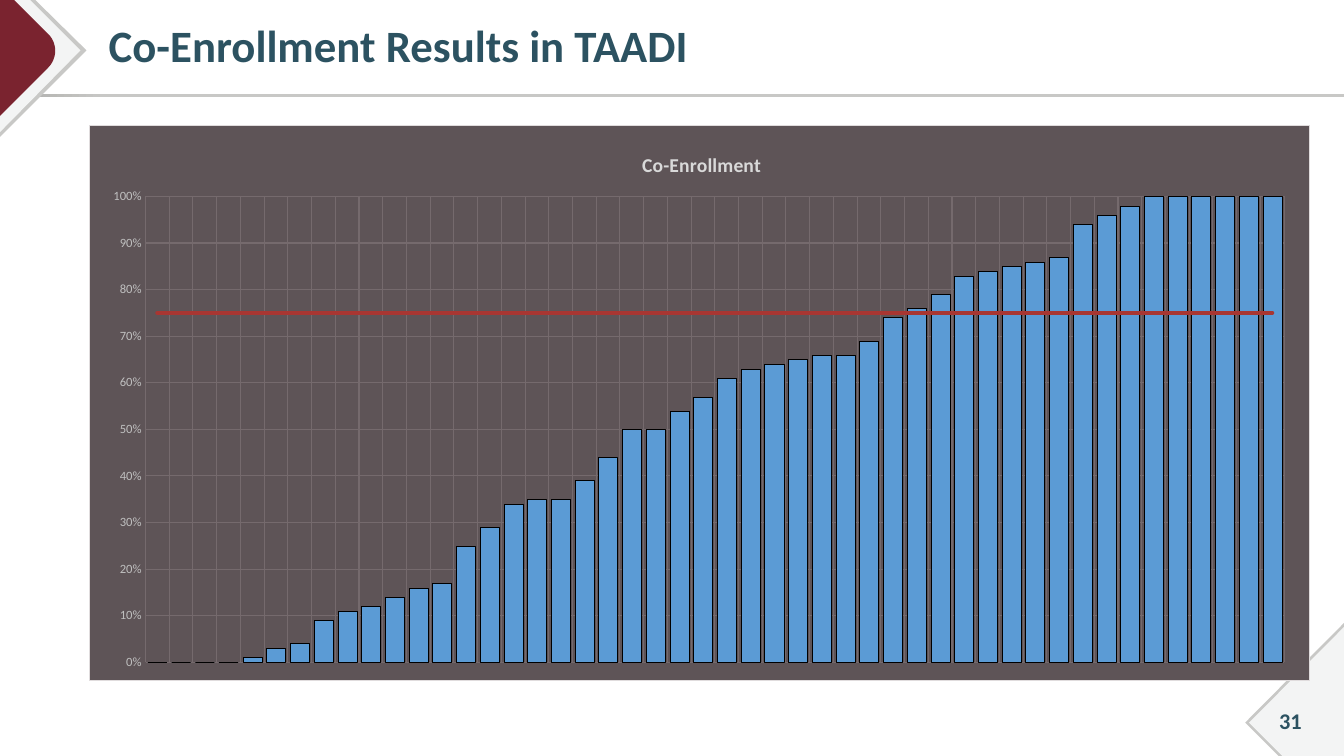
from lxml import etree
from pptx import Presentation
from pptx.chart.data import CategoryChartData
from pptx.dml.color import RGBColor
from pptx.enum.chart import XL_CHART_TYPE, XL_MARKER_STYLE, XL_TICK_LABEL_POSITION, XL_TICK_MARK
from pptx.enum.shapes import MSO_SHAPE
from pptx.enum.text import MSO_ANCHOR, PP_ALIGN
from pptx.oxml import parse_xml
from pptx.oxml.ns import qn
from pptx.util import Cm, Pt

COLUMN = XL_CHART_TYPE.COLUMN_CLUSTERED
NO_MARKER = XL_MARKER_STYLE.NONE
NO_LABELS = XL_TICK_LABEL_POSITION.NONE
NO_TICK = XL_TICK_MARK.NONE
RECT = MSO_SHAPE.RECTANGLE
MIDDLE = MSO_ANCHOR.MIDDLE
LEFT, CENTER = PP_ALIGN.LEFT, PP_ALIGN.CENTER

NAVY = RGBColor(0x2C, 0x52, 0x61)
MAROON = RGBColor(0x7A, 0x23, 0x2F)
SILVER = RGBColor(0xC8, 0xC8, 0xC6)
DARK_SILVER = RGBColor(0xAB, 0xAB, 0xA8)
PALE = RGBColor(0xF3, 0xF4, 0xF4)
CHART_BACK = RGBColor(0x5E, 0x54, 0x57)
CHART_EDGE = RGBColor(0xE0, 0xDC, 0xDD)
GRID = RGBColor(0x75, 0x6A, 0x6D)
AXIS_TEXT = RGBColor(0xBF, 0xBF, 0xBF)
TITLE_TEXT = RGBColor(0xD9, 0xD9, 0xD9)
BAR_BLUE = RGBColor(0x5B, 0x9B, 0xD5)
TARGET_RED = RGBColor(0xA8, 0x36, 0x32)
BLACK = RGBColor(0, 0, 0)

FONT = "Calibri"
WIDTH, HEIGHT = 33.87, 19.05
RATES = [0, 0, 0, 0, 0.01, 0.03, 0.04, 0.09, 0.11, 0.12, 0.14, 0.16,
         0.17, 0.25, 0.29, 0.34, 0.35, 0.35, 0.39, 0.44, 0.5, 0.5, 0.54, 0.57,
         0.61, 0.63, 0.64, 0.65, 0.66, 0.66, 0.69, 0.74, 0.76, 0.79, 0.83, 0.84,
         0.85, 0.86, 0.87, 0.94, 0.96, 0.98, 1, 1, 1, 1, 1, 1]
TARGET = 0.75
C_NS = 'xmlns:c="http://schemas.openxmlformats.org/drawingml/2006/chart"'
A_NS = 'xmlns:a="http://schemas.openxmlformats.org/drawingml/2006/main"'


def set_font(font, size, color, bold=False):
    font.name, font.size, font.bold = FONT, Pt(size), bold
    font.color.rgb = color


def add_text(slide, box, text, size=16, color=NAVY, bold=True, align=LEFT,
             inset=0.25, spacing=1.0):
    tf = slide.shapes.add_textbox(*map(Cm, box)).text_frame
    tf.word_wrap = True
    tf.vertical_anchor = MIDDLE
    tf.margin_left = Cm(inset)
    p = tf.paragraphs[0]
    p.alignment, p.line_spacing = align, spacing
    r = p.add_run()
    r.text = text
    set_font(r.font, size, color, bold)


def add_outline(slide, origin, points, color):
    """Draw a filled outline whose points are centimetres from the origin."""
    x0, y0 = origin
    pts = [(Cm(x0 + x), Cm(y0 + y)) for x, y in points]
    builder = slide.shapes.build_freeform(*pts[0])
    builder.add_line_segments(pts[1:], close=True)
    sp = builder.convert_to_shape()
    sp.shadow.inherit = False
    sp.fill.solid()
    sp.fill.fore_color.rgb = color
    sp.line.fill.background()


def bezier(p0, p1, p2, p3, steps=12):
    def at(t):
        u = 1 - t
        return tuple(u**3 * a + 3 * u * u * t * b + 3 * u * t * t * c + t**3 * d
                     for a, b, c, d in zip(p0, p1, p2, p3))
    return [at(i / steps) for i in range(steps + 1)]


def add_top_corner(slide, origin):
    tip = bezier((1.22, 0.86), (1.45, 1.09), (1.45, 1.47), (1.22, 1.7))
    add_outline(slide, origin, [(0, 0), (0.89, 0), (2.18, 1.27), (0, 3.45)], SILVER)
    add_outline(slide, origin, [(0, 0), (0.76, 0), (2.03, 1.27), (0, 3.33)], PALE)
    add_outline(slide, origin, [(0, 0), (0.36, 0), *tip, (0, 2.92)], MAROON)


def add_bottom_corner(slide, origin):
    add_outline(slide, origin, [(0, -3.35), (0, 0), (-1.65, 0), (-2.49, -0.84)], SILVER)
    add_outline(slide, origin, [(0, -3.25), (0, 0), (-1.55, 0), (-2.39, -0.84)], PALE)
    x, y = origin
    add_text(slide, (x - 2.25, y - 1.4, 1.8, 1.02), "31", align=CENTER)


def add_header(slide, box):
    x, y, w, h = box
    rule = slide.shapes.add_shape(RECT, Cm(x), Cm(y + h - 0.08), Cm(w), Cm(0.08))
    rule.shadow.inherit = False
    rule.line.fill.background()
    rule.fill.gradient()
    rule.fill.gradient_angle = 0
    for stop, color, position in zip(rule.fill.gradient_stops,
                                     (DARK_SILVER, SILVER), (0, 0.08)):
        stop.color.rgb, stop.position = color, position
    add_top_corner(slide, (x, y))
    add_text(slide, (x + 2.24, y + 0.13, 30.78, 2.18),
             "Co-Enrollment Results in TAADI", size=32, inset=0.5, spacing=0.9)


def set_layout(parent, **edges):
    """Fix a chart part at fractions of the chart area."""
    layout = parent.find(qn("c:layout"))
    if layout is None:
        layout = etree.SubElement(parent, qn("c:layout"))
        parent.insert(0, layout)
    manual = etree.SubElement(layout, qn("c:manualLayout"))
    if "w" in edges:
        etree.SubElement(manual, qn("c:layoutTarget")).set("val", "inner")
    for name in "xy":
        etree.SubElement(manual, qn(f"c:{name}Mode")).set("val", "edge")
    for name, value in edges.items():
        etree.SubElement(manual, qn(f"c:{name}")).set("val", str(value))


def move_last_series_to_line(chart):
    bars = chart.element.find(".//" + qn("c:barChart"))
    line = parse_xml(f'<c:lineChart {C_NS}><c:grouping val="standard"/>'
                     '<c:varyColors val="0"/></c:lineChart>')
    ser = bars.findall(qn("c:ser"))[-1]
    for flag in ser.findall(qn("c:invertIfNegative")):
        ser.remove(flag)
    line.append(ser)
    etree.SubElement(line, qn("c:marker")).set("val", "1")
    for ax in bars.findall(qn("c:axId")):
        etree.SubElement(line, qn("c:axId")).set("val", ax.get("val"))
    bars.addnext(line)


def fill_chart_area(chart):
    chart.element.find(qn("c:chart")).addnext(parse_xml(
        f'<c:spPr {C_NS} {A_NS}><a:solidFill><a:srgbClr val="{CHART_BACK}"/></a:solidFill>'
        f'<a:ln w="9525"><a:solidFill><a:srgbClr val="{CHART_EDGE}"/></a:solidFill></a:ln>'
        '</c:spPr>'))


def style_axis(axis):
    axis.major_tick_mark = axis.minor_tick_mark = NO_TICK
    axis.format.line.fill.background()
    axis.has_major_gridlines = True
    grid = axis.major_gridlines.format.line
    grid.color.rgb, grid.width = GRID, Pt(0.75)
    set_font(axis.tick_labels.font, 9, AXIS_TEXT)


def add_enrollment_chart(slide, box):
    data = CategoryChartData(number_format="0%")
    data.categories = [str(i + 1) for i in range(len(RATES))]
    data.add_series("Series 1", RATES)
    data.add_series("Series 2", [TARGET] * len(RATES))
    chart = slide.shapes.add_chart(COLUMN, *map(Cm, box), data).chart
    fill_chart_area(chart)
    set_font(chart.font, 10, AXIS_TEXT)
    chart.has_legend = False
    move_last_series_to_line(chart)

    chart.has_title = True
    r = chart.chart_title.text_frame.paragraphs[0].add_run()
    r.text = "Co-Enrollment"
    set_font(r.font, 14, TITLE_TEXT, bold=True)
    set_layout(chart.element.find(".//" + qn("c:title")), x=0.45, y=0.04)
    set_layout(chart.element.find(".//" + qn("c:plotArea")), x=0.046, y=0.128, w=0.933, h=0.84)

    style_axis(chart.category_axis)
    chart.category_axis.tick_label_position = NO_LABELS
    values = chart.value_axis
    style_axis(values)
    values.minimum_scale, values.maximum_scale, values.major_unit = 0, 1, 0.1
    values.tick_labels.number_format = "0%"
    values.tick_labels.number_format_is_linked = False

    bars, line = chart.plots
    bars.gap_width, bars.overlap, bars.vary_by_categories = 25, -40, False
    rates, target = bars.series[0], line.series[0]
    rates.format.fill.solid()
    rates.format.fill.fore_color.rgb = BAR_BLUE
    rates.format.line.color.rgb, rates.format.line.width = BLACK, Pt(0.1)
    target.format.line.color.rgb, target.format.line.width = TARGET_RED, Pt(3)
    chart.element.find(f".//{qn('c:lineChart')}//{qn('a:ln')}").set("cap", "rnd")
    target.marker.style = NO_MARKER
    target.smooth = False


def main():
    prs = Presentation()
    prs.slide_width, prs.slide_height = Cm(WIDTH), Cm(HEIGHT)
    slide = prs.slides.add_slide(prs.slide_layouts[6])
    add_header(slide, (0, 0, WIDTH, 2.44))
    add_bottom_corner(slide, (WIDTH, HEIGHT))
    add_enrollment_chart(slide, (2.24, 3.15, 30.78, 14))
    prs.save("out.pptx")


if __name__ == "__main__":
    main()
